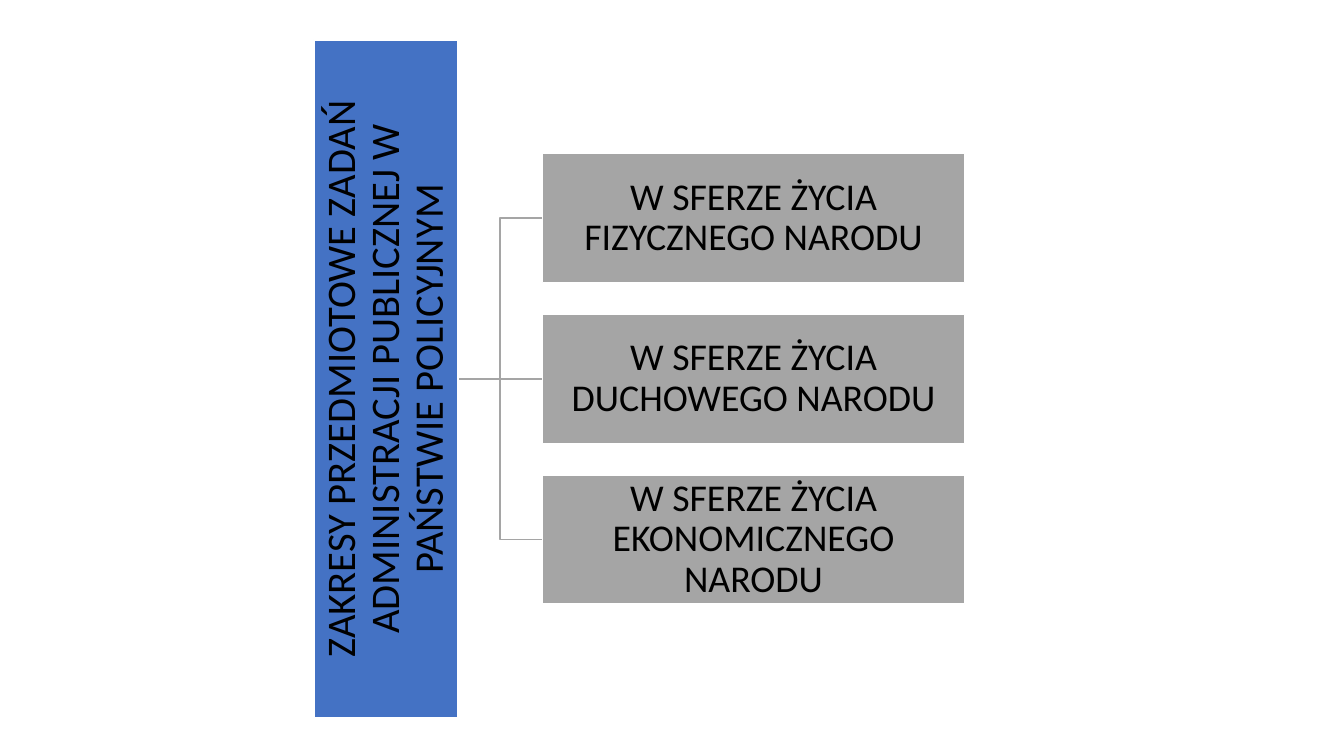
from pptx import Presentation
from pptx.dml.color import RGBColor
from pptx.enum.shapes import MSO_CONNECTOR as Link, MSO_SHAPE as Shape
from pptx.enum.text import MSO_ANCHOR as Anchor, PP_ALIGN as Align
from pptx.oxml.ns import qn
from pptx.util import Cm, Pt
from lxml import etree

TITLE = "ZAKRESY PRZEDMIOTOWE ZADAŃ ADMINISTRACJI PUBLICZNEJ W PAŃSTWIE POLICYJNYM"
SPHERES = [
    "W SFERZE ŻYCIA FIZYCZNEGO NARODU",
    "W SFERZE ŻYCIA DUCHOWEGO NARODU",
    "W SFERZE ŻYCIA EKONOMICZNEGO NARODU",
]
BLUE, GRAY, WHITE, BLACK = "4472C4", "A5A5A5", "FFFFFF", "000000"

MID = 9.55  # vertical centre of the whole diagram, in cm
BAR_X, BAR_W, BAR_H = 7.91, 3.63, 17.09
BOX_X, BOX_W, BOX_H = 13.67, 10.64, 3.25
PITCH = 4.05


def paint(color, hue):
    color.rgb = RGBColor.from_string(hue)


def add_box(slide, text, center, size, hue, points, turn=0):
    """Add a filled, labelled rectangle around a centre point."""
    (x, y), (w, h) = center, size
    box = slide.shapes.add_shape(
        Shape.RECTANGLE, Cm(x - w / 2), Cm(y - h / 2), Cm(w), Cm(h))
    box.rotation = turn
    box.shadow.inherit = False
    box.fill.solid()
    paint(box.fill.fore_color, hue)
    paint(box.line.color, WHITE)
    box.line.width = Pt(1)

    frame = box.text_frame
    frame.text = text
    frame.word_wrap = True
    frame.vertical_anchor = Anchor.MIDDLE
    frame.margin_left = frame.margin_right = Cm(0.05)
    frame.margin_top = frame.margin_bottom = Cm(0.05)
    para = frame.paragraphs[0]
    para.alignment = Align.CENTER
    para.line_spacing = 0.9
    font = para.runs[0].font
    font.name, font.size = "Calibri", Pt(points)
    paint(font.color, BLACK)


def add_link(slide, y):
    """Join the bar to the box centred at height y."""
    kind = Link.STRAIGHT if y == MID else Link.ELBOW
    link = slide.shapes.add_connector(
        kind, Cm(BAR_X + BAR_W), Cm(MID), Cm(BOX_X), Cm(y))
    paint(link.line.color, GRAY)
    link.line.width = Pt(1)
    etree.SubElement(link._element.spPr, qn("a:effectLst"))


def main():
    deck = Presentation()
    deck.slide_width, deck.slide_height = Cm(33.87), Cm(19.05)
    slide = deck.slides.add_slide(deck.slide_layouts[6])

    rows = [MID + (i - len(SPHERES) // 2) * PITCH for i in range(len(SPHERES))]
    for y in rows:
        add_link(slide, y)
    # The bar is drawn lying down, then turned to read upwards.
    add_box(slide, TITLE, (BAR_X + BAR_W / 2, MID), (BAR_H, BAR_W), BLUE, 29, 270)
    for text, y in zip(SPHERES, rows):
        add_box(slide, text, (BOX_X + BOX_W / 2, y), (BOX_W, BOX_H), GRAY, 27)

    deck.save("out.pptx")


if __name__ == "__main__":
    main()
